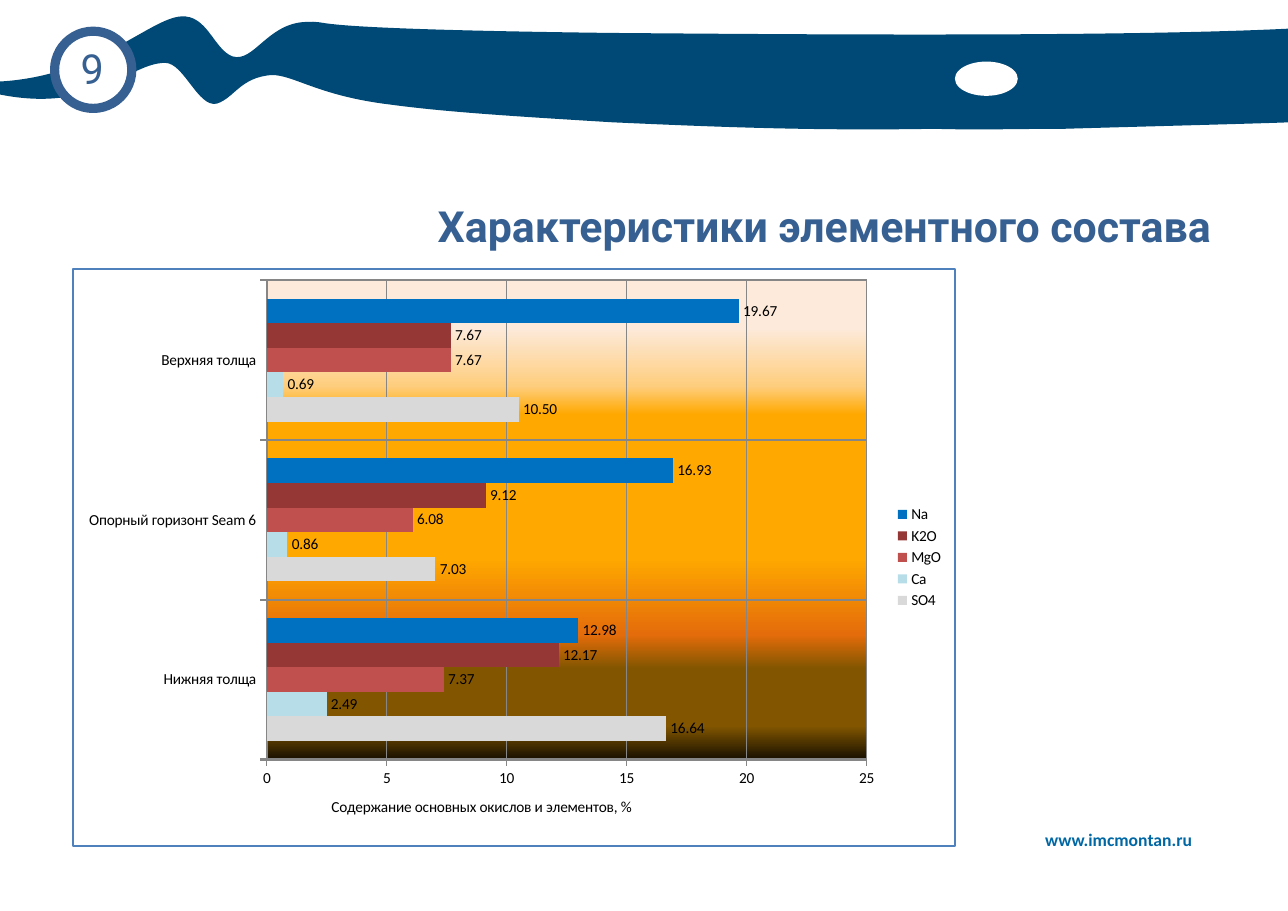
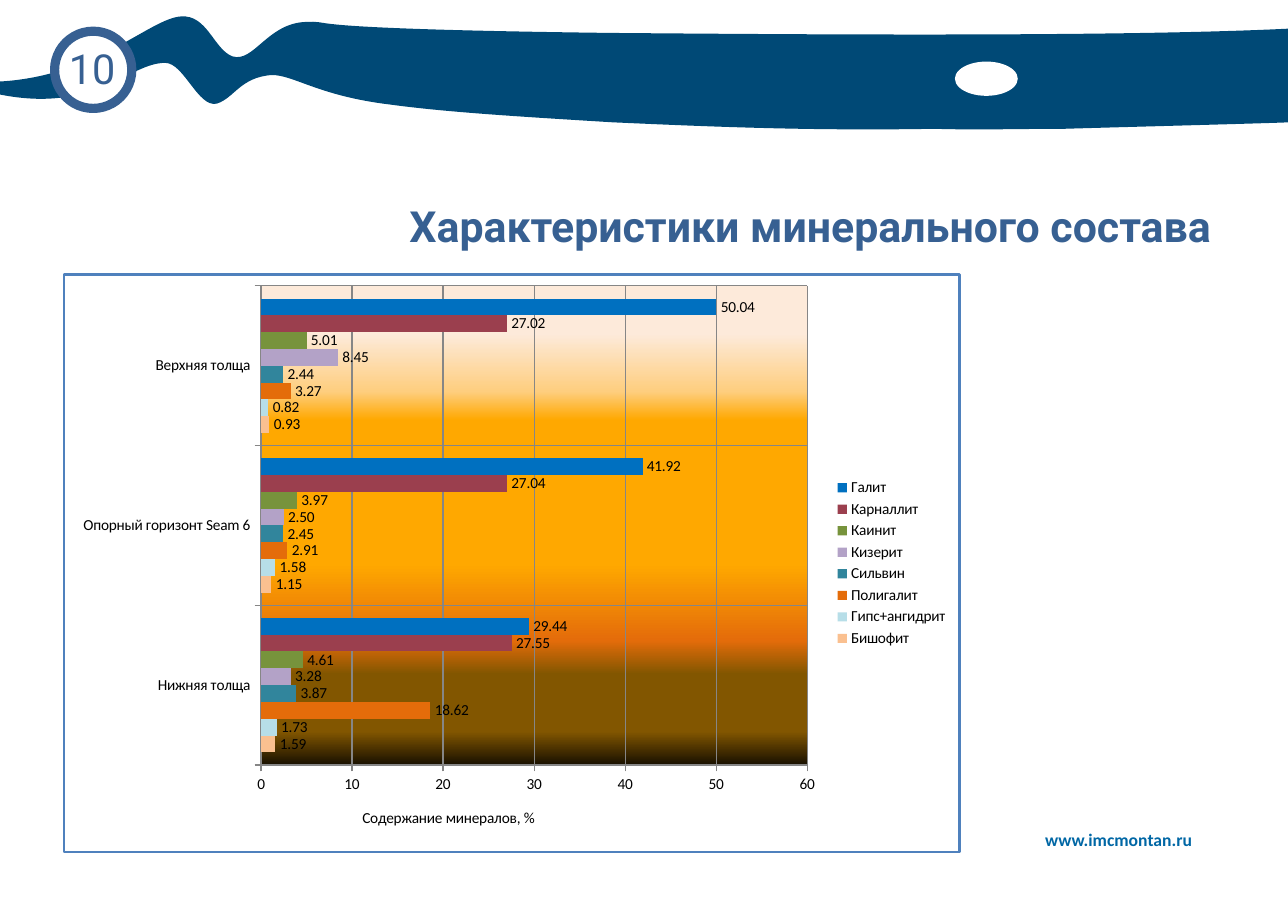
from dataclasses import dataclass

from lxml.etree import SubElement
from pptx import Presentation
from pptx.chart.chart import Chart
from pptx.chart.data import CategoryChartData as Data
from pptx.dml.color import RGBColor as Rgb
from pptx.dml.fill import FillFormat as Fill
from pptx.enum.chart import XL_CHART_TYPE as Kind
from pptx.enum.chart import XL_LABEL_POSITION as Spot
from pptx.enum.chart import XL_LEGEND_POSITION as Side
from pptx.enum.chart import XL_TICK_MARK as Tick
from pptx.enum.shapes import MSO_SHAPE as Form
from pptx.enum.text import MSO_ANCHOR as Anchor
from pptx.enum.text import PP_ALIGN as Align
from pptx.oxml import parse_xml
from pptx.oxml.ns import nsdecls, qn
from pptx.shapes.autoshape import Shape
from pptx.slide import Slide
from pptx.text.text import Font
from pptx.text.text import TextFrame as Frame
from pptx.util import Cm, Pt

BLUE = "376092"
NAVY = "004976"
LINK = "0067A5"
WHITE = "FFFFFF"
BLACK = "000000"
GREY = "868686"
EDGE = "4F81BD"
HEAD = "Roboto"
BODY = "Calibri"
Box = tuple[float, float, float, float]
Point = tuple[float, float]

LAYERS = ["Нижняя толща", "Опорный горизонт Seam 6", "Верхняя толща"]
FADE = [
    (10, "FDEADA"), (22, "FECE7F"), (28, "FFA800"), (39, "FFA800"),
    (58, "FFA800"), (74, "E46C0A"), (81, "825600"), (93, "825600"),
    (100, "181000"),
]
START = (0, 2.18)
WAVE = [
    ((0, 1.96), (0, 2.01), (0, 1.88)),
    ((2.24, 1.75), (3.45, 0.43), (4.17, 0.38)),
    ((4.78, 0.33), (4.93, 1.14), (5.36, 1.3)),
    ((5.84, 1.45), (6.15, 0.58), (6.99, 0.51)),
    ((7.87, 0.46), (6.17, 0.66), (14.07, 0.76)),
    ((17.86, 0.79), (25.73, 0.86), (29.74, 0.66)),
    ((29.77, 1.27), (29.72, 2.82), (29.72, 2.82)),
    ((29.36, 2.84), (25.15, 2.95), (24.54, 2.97)),
    ((23.5, 2.97), (22.53, 3), (21.54, 2.97)),
    ((18.67, 3.02), (16.36, 2.92), (14.12, 2.82)),
    ((12.01, 2.69), (10.31, 2.59), (8.99, 2.41)),
    ((7.34, 2.21), (6.78, 1.73), (6.27, 1.73)),
    ((5.54, 1.78), (5.41, 2.26), (5, 2.39)),
    ((4.57, 2.49), (4.24, 1.45), (3.81, 1.45)),
    ((2.97, 1.45), (2.21, 2.62), START),
]


@dataclass
class Row:
    name: str
    hue: str
    vals: tuple[float, float, float]


@dataclass
class Page:
    num: int
    title: str
    axis: str
    box: Box
    plot: Box
    label: Point
    top: int
    step: int
    grid: float
    rows: list[Row]


PAGES = [
    Page(
        9, "Характеристики элементного состава",
        "Содержание основных окислов и элементов, %",
        (1.65, 6.17, 20.4, 13.36), (0.22, 0.02, 0.68, 0.83), (0.29, 0.91),
        25, 5, 1.5,
        [
            Row("SO4", "D9D9D9", (16.64, 7.03, 10.5)),
            Row("Ca", "B7DEE8", (2.49, 0.86, 0.69)),
            Row("MgO", "C0504D", (7.37, 6.08, 7.67)),
            Row("K2O", "953735", (12.17, 9.12, 7.67)),
            Row("Na", "0070C0", (12.98, 16.93, 19.67)),
        ],
    ),
    Page(
        10, "Характеристики минерального состава",
        "Содержание минералов, %",
        (1.45, 6.3, 20.7, 13.36), (0.22, 0.02, 0.61, 0.83), (0.33, 0.92),
        60, 10, 0.75,
        [
            Row("Бишофит", "FAC090", (1.59, 1.15, 0.93)),
            Row("Гипс+ангидрит", "B7DEE8", (1.73, 1.58, 0.82)),
            Row("Полигалит", "E46C0A", (18.62, 2.91, 3.27)),
            Row("Сильвин", "31859C", (3.87, 2.45, 2.44)),
            Row("Кизерит", "B3A2C7", (3.28, 2.5, 8.45)),
            Row("Каинит", "77933C", (4.61, 3.97, 5.01)),
            Row("Карналлит", "9B3F4E", (27.55, 27.04, 27.02)),
            Row("Галит", "0070C0", (29.44, 41.92, 50.04)),
        ],
    ),
]


def paint(fill: Fill, hue: str) -> None:
    fill.solid()
    fill.fore_color.rgb = Rgb.from_string(hue)


def style(font: Font, size: float, face: str, hue: str,
          bold: bool = False) -> None:
    font.size, font.name, font.bold = Pt(size), face, bold
    font.color.rgb = Rgb.from_string(hue)


def write(frame: Frame, text: str, size: float, face: str, hue: str,
          bold: bool = False, align: Align = Align.LEFT) -> None:
    frame.text = text
    frame.word_wrap = True
    frame.vertical_anchor = Anchor.MIDDLE
    para = frame.paragraphs[0]
    para.alignment = align
    style(para.runs[0].font, size, face, hue, bold)


def flat(shape: Shape, hue: str) -> None:
    shape.shadow.inherit = False
    paint(shape.fill, hue)
    shape.line.fill.background()


def band(slide: Slide) -> None:
    pen = slide.shapes.build_freeform(*map(Cm, START))
    dots = [tuple(map(Cm, dot)) for curve in WAVE for dot in curve]
    pen.add_line_segments(dots, close=True)
    shape = pen.convert_to_shape()
    flat(shape, NAVY)
    legs = list(shape.element.iter(qn("a:lnTo")))
    for i in range(0, len(WAVE) * 3, 3):
        bend = parse_xml(f"<a:cubicBezTo {nsdecls('a')}/>")
        legs[i].addprevious(bend)
        for leg in legs[i:i + 3]:
            bend.append(leg[0])
            leg.getparent().remove(leg)


def oval(slide: Slide, box: Box) -> Shape:
    shape = slide.shapes.add_shape(Form.OVAL, *map(Cm, box))
    flat(shape, WHITE)
    return shape


def frame(slide: Slide, page: Page) -> None:
    band(slide)
    oval(slide, (22.02, 1.42, 1.45, 0.79))
    ring = oval(slide, (1.26, 0.72, 1.78, 1.78))
    paint(ring.line.fill, BLUE)
    ring.line.width = Pt(6)
    num = slide.shapes.add_textbox(*map(Cm, (0.74, 0.86, 2.77, 1.42)))
    write(num.text_frame, str(page.num), 27, HEAD, BLUE, align=Align.CENTER)
    site = slide.shapes.add_textbox(*map(Cm, (23.85, 18.97, 4.37, 0.74)))
    write(site.text_frame, "www.imcmontan.ru", 11.5, BODY, LINK, True)
    title = slide.shapes.title
    title.left, title.top, title.width, title.height = map(
        Cm, (1.45, 3.91, 26.72, 2.59))
    write(title.text_frame, page.title, 28, HEAD, BLUE, True, Align.RIGHT)


def place(node, index: int, spot: tuple) -> None:
    old = node.find(qn("c:layout"))
    if old is not None:
        node.remove(old)
    layout = parse_xml(f"<c:layout {nsdecls('c')}/>")
    node.insert(index, layout)
    man = SubElement(layout, qn("c:manualLayout"))
    if len(spot) == 4:
        SubElement(man, qn("c:layoutTarget")).set("val", "inner")
    for tag in ("xMode", "yMode"):
        SubElement(man, qn(f"c:{tag}")).set("val", "edge")
    for tag, val in zip("xywh", spot):
        SubElement(man, qn(f"c:{tag}")).set("val", str(val))


def dress(chart: Chart) -> None:
    names = nsdecls("c", "a")
    stops = "".join(
        f'<a:gs pos="{pos * 1000}"><a:srgbClr val="{hue}"/></a:gs>'
        for pos, hue in FADE
    )
    back = parse_xml(
        f"<c:spPr {names}><a:gradFill><a:gsLst>{stops}</a:gsLst>"
        '<a:lin ang="5400000" scaled="0"/></a:gradFill></c:spPr>')
    edge = parse_xml(
        f'<c:spPr {names}><a:noFill/><a:ln w="{Pt(1.5)}"><a:solidFill>'
        f'<a:srgbClr val="{EDGE}"/></a:solidFill></a:ln></c:spPr>')
    body = chart.element.find(qn("c:chart"))
    body.find(qn("c:plotArea")).append(back)
    body.addnext(edge)


def graph(slide: Slide, page: Page) -> None:
    data = Data(number_format="0.00")
    data.categories = LAYERS
    for row in page.rows:
        data.add_series(row.name, row.vals)
    chart = slide.shapes.add_chart(
        Kind.BAR_CLUSTERED, *map(Cm, page.box), data).chart
    style(chart.font, 10, BODY, BLACK)
    chart.has_title = False
    chart.has_legend = True
    chart.legend.position = Side.RIGHT
    chart.legend.include_in_layout = False

    plot = chart.plots[0]
    plot.vary_by_categories = False
    plot.gap_width, plot.overlap = 150, 0
    for row, bar in zip(page.rows, plot.series):
        paint(bar.format.fill, row.hue)
        tags = bar.data_labels
        tags.show_value = True
        tags.number_format = "0.00"
        tags.number_format_is_linked = False
        tags.position = Spot.OUTSIDE_END

    cats, vals = chart.category_axis, chart.value_axis
    for axis, width in ((cats, page.grid), (vals, 0.75)):
        axis.has_major_gridlines = True
        axis.major_tick_mark = Tick.CROSS
        axis.minor_tick_mark = Tick.NONE
        for line in (axis.format.line, axis.major_gridlines.format.line):
            paint(line.fill, GREY)
            line.width = Pt(width)
    vals.minimum_scale, vals.maximum_scale = 0, page.top
    vals.major_unit = page.step
    vals.tick_labels.number_format = "0"
    vals.tick_labels.number_format_is_linked = False
    head = vals.axis_title
    head.text_frame.text = page.axis
    style(head.text_frame.paragraphs[0].runs[0].font, 10, BODY, BLACK)
    place(head.element, 1, page.label)
    place(chart.element.find(f".//{qn('c:plotArea')}"), 0, page.plot)
    dress(chart)


def main() -> None:
    deck = Presentation()
    deck.slide_width, deck.slide_height = Cm(29.7), Cm(21)
    for page in PAGES:
        slide = deck.slides.add_slide(deck.slide_layouts[5])
        frame(slide, page)
        graph(slide, page)
    deck.save("out.pptx")


if __name__ == "__main__":
    main()
